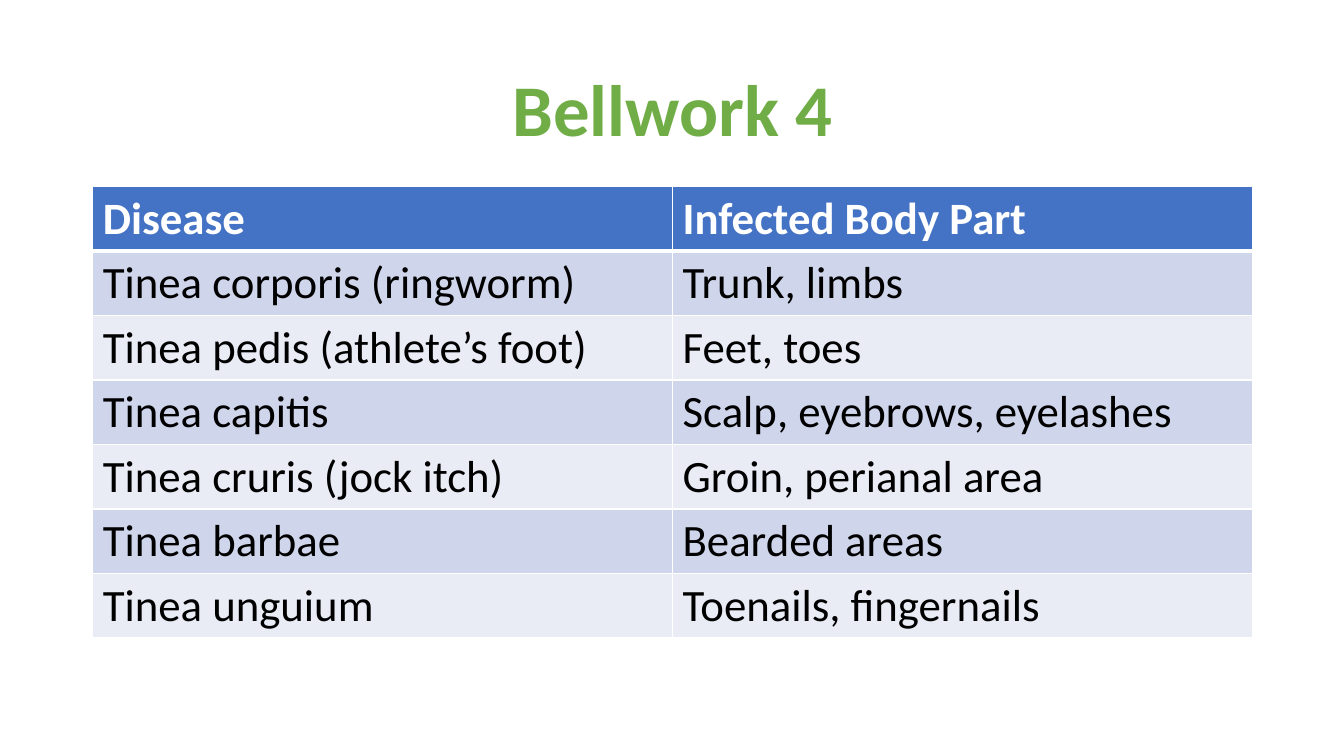
from lxml import etree
from pptx import Presentation
from pptx.dml.color import RGBColor
from pptx.enum.text import MSO_ANCHOR, PP_ALIGN
from pptx.oxml.ns import qn
from pptx.util import Inches, Pt

CENTER = PP_ALIGN.CENTER
MIDDLE = MSO_ANCHOR.MIDDLE

COLORS = {
    "title": "70AD47",
    "header": "4472C4",
    "odd": "CFD5EA",
    "even": "E9EBF5",
    "white": "FFFFFF",
    "black": "000000",
}

ROWS = [
    ("Disease", "Infected Body Part"),
    ("Tinea corporis (ringworm)", "Trunk, limbs"),
    ("Tinea pedis (athlete’s foot)", "Feet, toes"),
    ("Tinea capitis", "Scalp, eyebrows, eyelashes"),
    ("Tinea cruris (jock itch)", "Groin, perianal area"),
    ("Tinea barbae", "Bearded areas"),
    ("Tinea unguium", "Toenails, fingernails"),
]


def style_text(para, size, color, bold):
    para.font.name = "Calibri"
    para.font.size = Pt(size)
    para.font.bold = bold
    para.font.color.rgb = RGBColor.from_string(COLORS[color])


def add_border(cell, side, points, position):
    line = etree.Element(qn(f"a:{side}"), w=str(Pt(points)))
    fill = etree.SubElement(line, qn("a:solidFill"))
    etree.SubElement(fill, qn("a:srgbClr"), val=COLORS["white"])
    # Borders must come before the cell fill
    cell._tc.get_or_add_tcPr().insert(position, line)


deck = Presentation()
deck.slide_width = Inches(13.33)
deck.slide_height = Inches(7.5)
page = deck.slides.add_slide(deck.slide_layouts[6])

# Title
title = page.shapes.add_textbox(Inches(0.92), Inches(0.4), Inches(11.5), Inches(1.45))
frame = title.text_frame
frame.word_wrap = True
frame.vertical_anchor = MIDDLE
para = frame.paragraphs[0]
para.text = "Bellwork 4"
para.alignment = CENTER
para.line_spacing = 0.9
style_text(para, 52, "title", True)

# Table of diseases and body parts
table = page.shapes.add_table(
    len(ROWS), 2, Inches(0.92), Inches(1.85), Inches(11.5), Inches(0.64 * len(ROWS))
).table
for row, texts in enumerate(ROWS):
    is_header = row == 0
    fill_name = "header" if is_header else "odd" if row % 2 else "even"
    for column, text in enumerate(texts):
        cell = table.cell(row, column)
        cell.fill.solid()
        cell.fill.fore_color.rgb = RGBColor.from_string(COLORS[fill_name])
        para = cell.text_frame.paragraphs[0]
        para.text = text
        style_text(para, 32, "white" if is_header else "black", is_header)
        widths = {"lnL": 1, "lnR": 1, "lnT": 3 if row == 1 else 1, "lnB": 3 if is_header else 1}
        for position, (side, points) in enumerate(widths.items()):
            add_border(cell, side, points, position)

deck.save("out.pptx")
